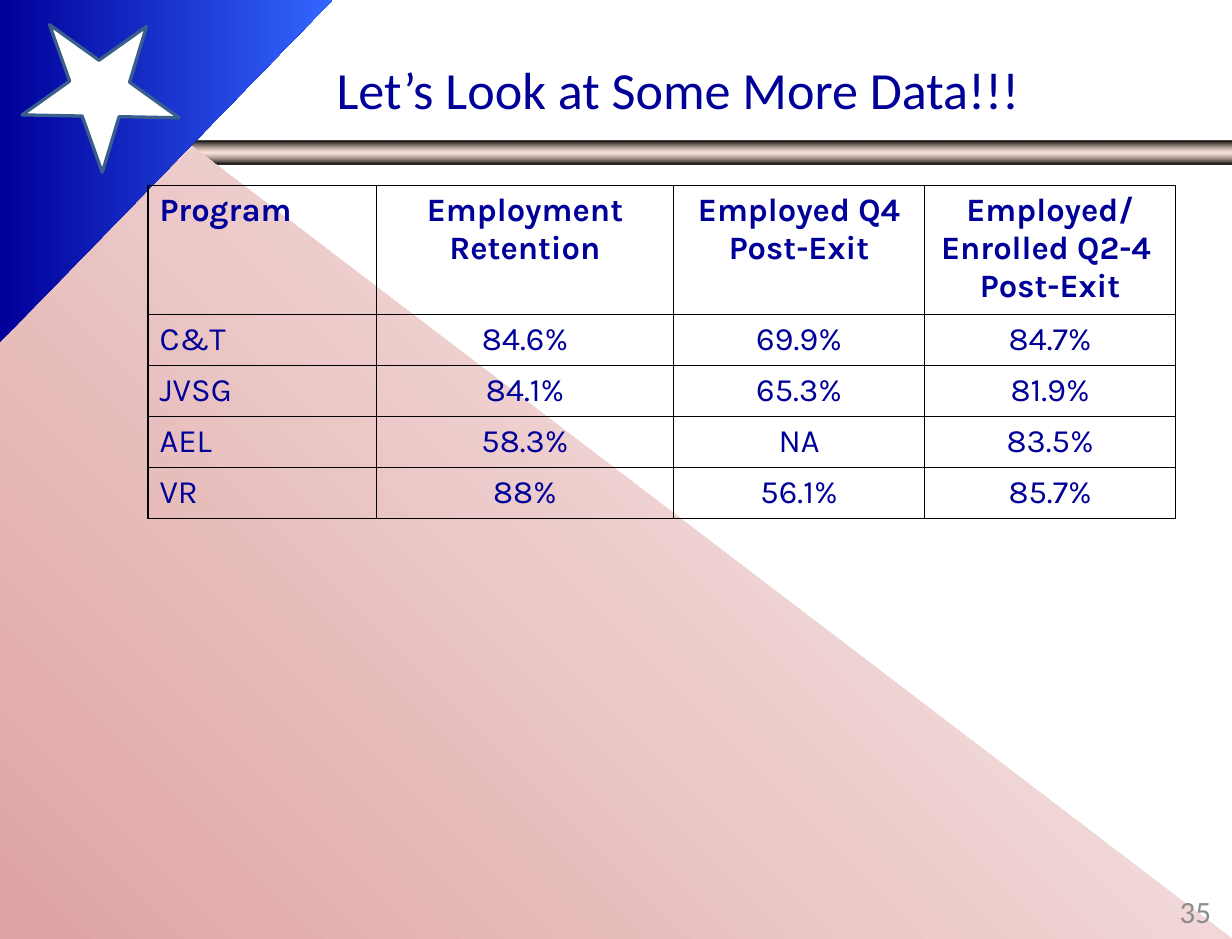
from pptx import Presentation
from pptx.dml.color import RGBColor
from pptx.enum.shapes import MSO_SHAPE
from pptx.enum.text import MSO_ANCHOR, MSO_AUTO_SIZE, PP_ALIGN
from pptx.oxml import parse_xml
from pptx.oxml.ns import nsdecls, qn
from pptx.util import Pt

NAVY = RGBColor(0x00, 0x00, 0x99)
BRIGHT_BLUE = RGBColor(0x33, 0x66, 0xFF)
ROSE = RGBColor(0xDE, 0xA3, 0xA2)
PEACH = RGBColor(0xEF, 0xC1, 0xAF)
STEEL = RGBColor(0x3A, 0x5F, 0x8C)
GRAY = RGBColor(0x8C, 0x8C, 0x8C)
WHITE = RGBColor(0xFF, 0xFF, 0xFF)
BLACK = RGBColor(0x00, 0x00, 0x00)

WIDTH, HEIGHT = 756, 576
COLUMN_WIDTHS = [140.4, 182.2, 154.1, 154.1]
HEADER_HEIGHT, ROW_HEIGHT = 77.4, 30.6
ROWS = [
    ["Program", "Employment Retention", "Employed Q4\nPost-Exit",
     "Employed/ Enrolled Q2-4 \nPost-Exit"],
    ["C&T", "84.6%", "69.9%", "84.7%"],
    ["JVSG", "84.1%", "65.3%", "81.9%"],
    ["AEL", "58.3%", "NA", "83.5%"],
    ["VR", "88%", "56.1%", "85.7%"],
]


def set_gradient(shape, stops, angle):
    """Fill a borderless shape with (position, colour, opacity) stops, angle clockwise."""
    shape.shadow.inherit = False
    shape.line.fill.background()
    shape.fill.background()
    stop_xml = "".join(
        f'<a:gs pos="{position * 1000}"><a:srgbClr val="{color}">'
        f'<a:alpha val="{opacity * 1000}"/></a:srgbClr></a:gs>'
        for position, color, opacity in stops
    )
    gradient = parse_xml(
        f'<a:gradFill {nsdecls("a")} rotWithShape="1"><a:gsLst>{stop_xml}</a:gsLst>'
        f'<a:lin ang="{angle * 60000}" scaled="0"/></a:gradFill>'
    )
    properties = shape._element.spPr
    properties.replace(properties.find(qn("a:noFill")), gradient)


def add_triangle(slide, corners, start_color, end_color, angle):
    """Draw a gradient triangle through three corners in points."""
    builder = slide.shapes.build_freeform(*corners[0], scale=Pt(1))
    builder.add_line_segments(corners[1:], close=True)
    triangle = builder.convert_to_shape()
    set_gradient(triangle, [(0, start_color, 100), (100, end_color, 100)], angle)


def add_bar(slide):
    """Draw the metallic bar under the title."""
    bar = slide.shapes.add_shape(MSO_SHAPE.RECTANGLE, 0, Pt(86.4), Pt(WIDTH), Pt(14.4))
    set_gradient(bar, [(0, BLACK, 100), (50, PEACH, 47), (100, BLACK, 100)], 90)


def add_star(slide):
    """Draw the tilted star in the corner."""
    star = slide.shapes.add_shape(
        MSO_SHAPE.STAR_5_POINT, Pt(15.1), Pt(7.9), Pt(97.9), Pt(88.6))
    star.rotation = 35.7
    star.shadow.inherit = False
    star.fill.solid()
    star.fill.fore_color.rgb = WHITE
    star.line.color.rgb = STEEL
    star.line.width = Pt(2)


def set_text(text_frame, text, size, font_name, color, alignment, bold=False):
    """Write text and format each of its paragraphs alike."""
    text_frame.text = text
    for paragraph in text_frame.paragraphs:
        paragraph.alignment = alignment
        paragraph.font.size = Pt(size)
        paragraph.font.name = font_name
        paragraph.font.bold = bold
        paragraph.font.color.rgb = color


def set_title(slide, text):
    """Place and format the title."""
    title = slide.shapes.title
    title.left, title.top, title.width, title.height = Pt(82.1), Pt(22.3), Pt(668.2), Pt(64.1)
    title.text_frame.auto_size = MSO_AUTO_SIZE.NONE
    title.text_frame.vertical_anchor = MSO_ANCHOR.MIDDLE
    set_text(title.text_frame, text, 32, "Calibri", NAVY, PP_ALIGN.CENTER)


def add_page_number(slide, text):
    """Add the page number at the lower right."""
    box = slide.shapes.add_textbox(Pt(573.8), Pt(543.6), Pt(176.4), Pt(31))
    box.text_frame.word_wrap = True
    box.text_frame.vertical_anchor = MSO_ANCHOR.MIDDLE
    set_text(box.text_frame, text, 19, "Calibri", GRAY, PP_ALIGN.RIGHT)


def set_borders(cell):
    """Give all four sides of a cell a thin black line."""
    properties = cell._tc.get_or_add_tcPr()
    for side in ("lnL", "lnR", "lnT", "lnB"):
        properties.append(parse_xml(
            f'<a:{side} {nsdecls("a")} w="{Pt(1)}"><a:solidFill>'
            f'<a:srgbClr val="{BLACK}"/></a:solidFill></a:{side}>'))


def add_results_table(slide):
    """Add the table of programs and their results."""
    table_height = HEADER_HEIGHT + ROW_HEIGHT * (len(ROWS) - 1)
    table = slide.shapes.add_table(
        len(ROWS), len(COLUMN_WIDTHS), Pt(90.7), Pt(113.8),
        Pt(sum(COLUMN_WIDTHS)), Pt(table_height)).table
    table.first_row = table.horz_banding = False
    for column, width in zip(table.columns, COLUMN_WIDTHS):
        column.width = Pt(width)
    for row_index, texts in enumerate(ROWS):
        is_header = row_index == 0
        table.rows[row_index].height = Pt(HEADER_HEIGHT if is_header else ROW_HEIGHT)
        for column_index, text in enumerate(texts):
            cell = table.cell(row_index, column_index)
            set_borders(cell)
            cell.fill.background()
            alignment = PP_ALIGN.CENTER if column_index else PP_ALIGN.LEFT
            set_text(cell.text_frame, text, 20, "Karla", NAVY, alignment, is_header)


def main():
    """Build and save the slide."""
    presentation = Presentation()
    presentation.slide_width, presentation.slide_height = Pt(WIDTH), Pt(HEIGHT)
    slide = presentation.slides.add_slide(presentation.slide_layouts[5])
    add_bar(slide)
    add_triangle(slide, [(0, 0), (WIDTH, HEIGHT), (0, HEIGHT)], WHITE, ROSE, 135)
    add_triangle(slide, [(0, 0), (204, 0), (0, 210)], NAVY, BRIGHT_BLUE, 0)
    add_star(slide)
    set_title(slide, "Let’s Look at Some More Data!!!")
    add_page_number(slide, "35")
    add_results_table(slide)
    presentation.save("out.pptx")


if __name__ == "__main__":
    main()
